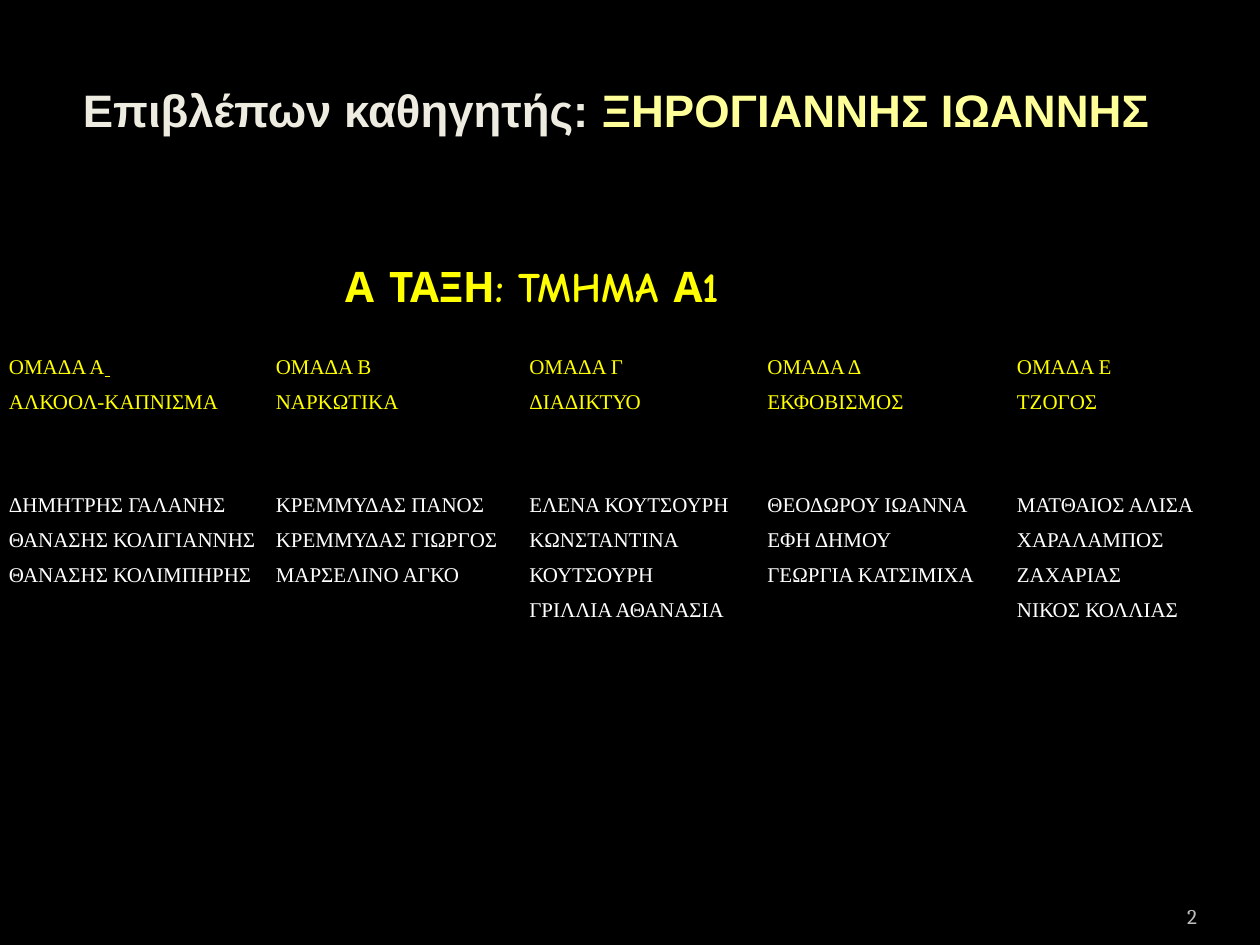
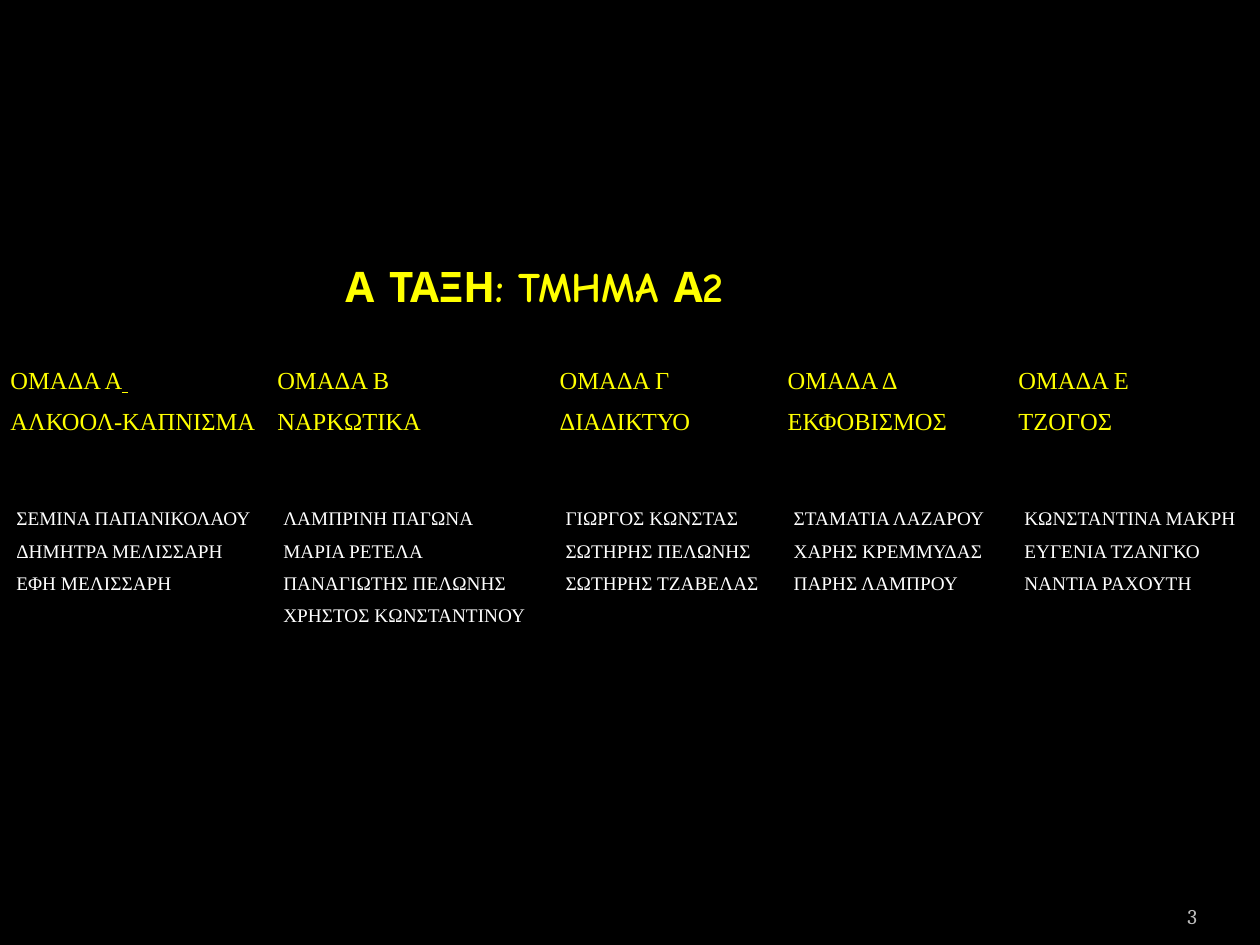
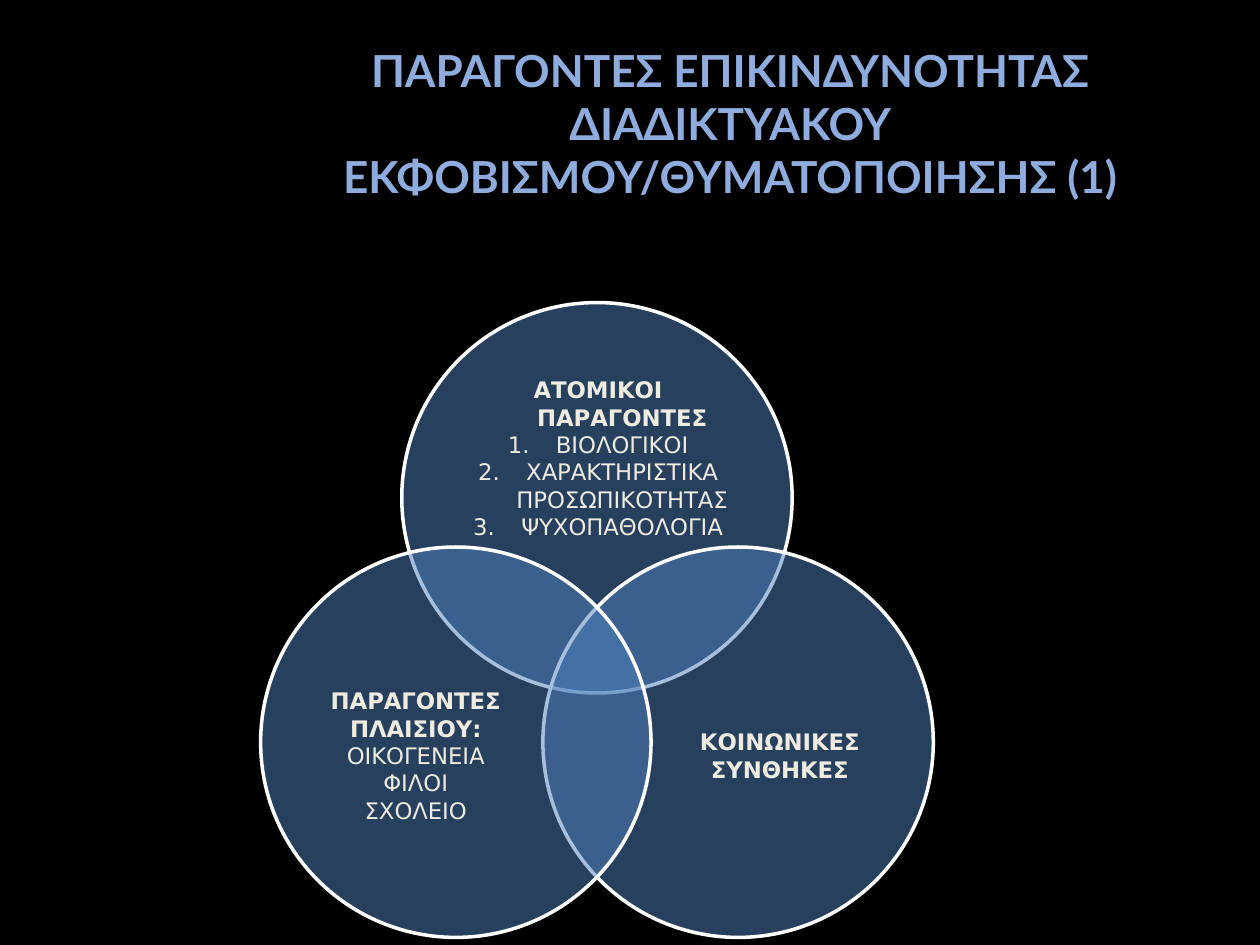
import math

from pptx import Presentation
from pptx.dml.color import RGBColor
from pptx.enum import shapes, text
from pptx.oxml import parse_xml
from pptx.oxml.ns import nsdecls
from pptx.oxml.xmlchemy import OxmlElement
from pptx.util import Cm, Pt

BLACK, WHITE, YELLOW, CREAM = "000000", "FFFFFF", "FFFF00", "EEECE1"
LEFT, MID, RIGHT = text.PP_ALIGN.LEFT, text.PP_ALIGN.CENTER, text.PP_ALIGN.RIGHT
TOP, CENTRE, BOTTOM = (text.MSO_ANCHOR.TOP, text.MSO_ANCHOR.MIDDLE,
                       text.MSO_ANCHOR.BOTTOM)
SERIF, SANS, COMIC = "Times New Roman", "DejaVu Sans", "Comic Neue"
PAD = (0.25, 0.13)
HEAD_BOX = (6.71, 5.13, 13, 1.4)
GROUPS = ["ΟΜΑΔΑ Α\nΑΛΚΟΟΛ-ΚΑΠΝΙΣΜΑ", "ΟΜΑΔΑ Β\nΝΑΡΚΩΤΙΚΑ",
          "ΟΜΑΔΑ Γ\nΔΙΑΔΙΚΤΥΟ", "ΟΜΑΔΑ Δ\nΕΚΦΟΒΙΣΜΟΣ", "ΟΜΑΔΑ Ε\nΤΖΟΓΟΣ"]


def rgb(code):
    return RGBColor.from_string(code)


def style(run, face, size, colour, bold=False):
    font = run.font
    font.name, font.size, font.bold = face, Pt(size), bold
    font.color.rgb = rgb(colour)


class Deck:
    def __init__(self):
        self.prs = Presentation()
        self.prs.slide_width, self.prs.slide_height = Cm(25.4), Cm(19.05)
        fill = self.prs.slide_master.background.fill
        fill.solid()
        fill.fore_color.rgb = rgb(BLACK)

    def page(self, number=None):
        """Start a slide; a number, if given, goes at the lower right."""
        self.slide = self.prs.slides.add_slide(self.prs.slide_layouts[5])
        if number:
            self.label(number, (22.02, 17.83, 2.11, 1.02), "Cambria", 12,
                       "BDBDBD", align=RIGHT, anchor=BOTTOM, pad=(0, 0.13))

    def put(self, shape, words, face, size, colour, bold=False,
            align=MID, anchor=CENTRE, pad=PAD):
        """Set and format the text of a shape."""
        frame = shape.text_frame
        frame.text = words
        frame.word_wrap = True
        frame.auto_size = text.MSO_AUTO_SIZE.NONE
        frame.vertical_anchor = anchor
        frame.margin_left = frame.margin_right = Cm(pad[0])
        frame.margin_top = frame.margin_bottom = Cm(pad[1])
        for para in frame.paragraphs:
            para.alignment = align
            for run in para.runs:
                style(run, face, size, colour, bold)
        return frame

    def title(self, words, box, face, size, colour, **look):
        shape = self.slide.shapes.title
        shape.left, shape.top, shape.width, shape.height = map(Cm, box)
        return self.put(shape, words, face, size, colour, bold=True, **look)

    def label(self, words, box, face, size, colour, **look):
        shape = self.slide.shapes.add_textbox(*map(Cm, box))
        return self.put(shape, words, face, size, colour, **look)

    def cell(self, cell, words, size, colour, pad):
        cell.text = words
        cell.margin_left = cell.margin_right = Cm(pad)
        cell.margin_top = cell.margin_bottom = 0
        for para in cell.text_frame.paragraphs:
            para.line_spacing = 1.5
            for run in para.runs:
                style(run, SERIF, size, colour)
        props = cell._tc.get_or_add_tcPr()
        for side in "LRTB":
            props.append(parse_xml(
                f'<a:ln{side} {nsdecls("a")} w="12700"><a:solidFill>'
                f'<a:srgbClr val="{BLACK}"/></a:solidFill></a:ln{side}>'))
        cell.fill.solid()
        cell.fill.fore_color.rgb = rgb(BLACK)

    def teams(self, spot, widths, heights, names, sizes, pads):
        """Table of the groups, with their members below."""
        table = self.slide.shapes.add_table(
            2, len(widths), *map(Cm, (*spot, sum(widths), sum(heights)))).table
        table.first_row = table.horz_banding = False
        for col, width in zip(table.columns, widths):
            col.width = Cm(width)
        for row, height in zip(table.rows, heights):
            row.height = Cm(height)
        for r, (line, colour) in enumerate([(GROUPS, YELLOW), (names, WHITE)]):
            for c, words in enumerate(line):
                self.cell(table.cell(r, c), words, sizes[r], colour, pads[r])
        tail = table.cell(0, 0).text_frame.paragraphs[0].add_run()
        tail.text = " "
        style(tail, SERIF, sizes[0], YELLOW, True)
        tail.font.italic = tail.font.underline = True

    def disc(self, x, y, size):
        shape = self.slide.shapes.add_shape(
            shapes.MSO_SHAPE.OVAL, Cm(x), Cm(y), Cm(size), Cm(size))
        shape.shadow.inherit = False
        shape.fill.solid()
        shape.fill.fore_color.rgb = rgb("4F81BD")
        alpha = OxmlElement("a:alpha")
        alpha.set("val", "50000")
        shape.fill._xPr.find(".//{*}srgbClr").append(alpha)
        shape.line.color.rgb = rgb(WHITE)
        shape.line.width = Pt(2)

    def factor(self, words, box):
        """Text of a disc: a bold first line, then plain ones."""
        frame = self.label(words, box, SANS, 13, CREAM, pad=(0, 0))
        frame.paragraphs[0].runs[0].font.bold = True
        return frame

    def count(self, frame):
        """Hang all lines and number those after the first."""
        for i, para in enumerate(frame.paragraphs):
            props = para._p.get_or_add_pPr()
            props.set("marL", str(Cm(0.97)))
            props.set("indent", str(-Cm(0.97)))
            if i:
                mark = OxmlElement("a:buAutoNum")
                mark.set("type", "arabicPeriod")
                props.append(mark)


def main():
    deck = Deck()
    head = dict(align=LEFT, anchor=TOP)

    deck.page("2")
    deck.label("Α ΤΑΞΗ: TMHMA Α1", HEAD_BOX, COMIC, 24, YELLOW, bold=True, **head)
    frame = deck.title("Επιβλέπων καθηγητής: ", (0.69, 0.71, 23.47, 2.97),
                       "Arial", 26, CREAM)
    name = frame.paragraphs[0].add_run()
    name.text = "ΞΗΡΟΓΙΑΝΝΗΣ ΙΩΑΝΝΗΣ"
    style(name, "Arial", 26, "FFFF99", True)
    deck.teams((0, 6.93), (5.38, 5.11, 4.8, 5.03, 5.08), (2.79, 3.73), [
        "ΔΗΜΗΤΡΗΣ ΓΑΛΑΝΗΣ\nΘΑΝΑΣΗΣ ΚΟΛΙΓΙΑΝΝΗΣ\nΘΑΝΑΣΗΣ ΚΟΛΙΜΠΗΡΗΣ",
        "ΚΡΕΜΜΥΔΑΣ ΠΑΝΟΣ\nΚΡΕΜΜΥΔΑΣ ΓΙΩΡΓΟΣ\nΜΑΡΣΕΛΙΝΟ ΑΓΚΟ",
        "ΕΛΕΝΑ ΚΟΥΤΣΟΥΡΗ\nΚΩΝΣΤΑΝΤΙΝΑ ΚΟΥΤΣΟΥΡΗ\nΓΡΙΛΛΙΑ ΑΘΑΝΑΣΙΑ",
        "ΘΕΟΔΩΡΟΥ ΙΩΑΝΝΑ\nΕΦΗ ΔΗΜΟΥ\nΓΕΩΡΓΙΑ ΚΑΤΣΙΜΙΧΑ",
        "ΜΑΤΘΑΙΟΣ ΑΛΙΣΑ\nΧΑΡΑΛΑΜΠΟΣ ΖΑΧΑΡΙΑΣ\nΝΙΚΟΣ ΚΟΛΛΙΑΣ",
    ], sizes=(12, 12), pads=(0.18, 0.18))

    deck.page("3")
    deck.title("Α ΤΑΞΗ: TMHMA Α2", HEAD_BOX, COMIC, 24, YELLOW, **head)
    deck.teams((0.03, 7.14), (5.38, 5.69, 4.6, 4.65, 5.08), (2.9, 5.1), [
        "ΣΕΜΙΝΑ ΠΑΠΑΝΙΚΟΛΑΟΥ\nΔΗΜΗΤΡΑ ΜΕΛΙΣΣΑΡΗ\nΕΦΗ ΜΕΛΙΣΣΑΡΗ",
        "ΛΑΜΠΡΙΝΗ ΠΑΓΩΝΑ\nΜΑΡΙΑ ΡΕΤΕΛΑ\nΠΑΝΑΓΙΩΤΗΣ ΠΕΛΩΝΗΣ\n"
        "ΧΡΗΣΤΟΣ ΚΩΝΣΤΑΝΤΙΝΟΥ",
        "ΓΙΩΡΓΟΣ ΚΩΝΣΤΑΣ\nΣΩΤΗΡΗΣ ΠΕΛΩΝΗΣ\nΣΩΤΗΡΗΣ ΤΖΑΒΕΛΑΣ",
        "ΣΤΑΜΑΤΙΑ ΛΑΖΑΡΟΥ\nΧΑΡΗΣ ΚΡΕΜΜΥΔΑΣ\nΠΑΡΗΣ ΛΑΜΠΡΟΥ",
        "ΚΩΝΣΤΑΝΤΙΝΑ ΜΑΚΡΗ\nΕΥΓΕΝΙΑ ΤΖΑΝΓΚΟ\nΝΑΝΤΙΑ ΡΑΧΟΥΤΗ",
    ], sizes=(14, 11), pads=(0.18, 0.3))

    deck.page()
    deck.title("ΠΑΡΑΓΟΝΤΕΣ ΕΠΙΚΙΝΔΥΝΟΤΗΤΑΣ ΔΙΑΔΙΚΤΥΑΚΟΥ "
               "ΕΚΦΟΒΙΣΜΟΥ/ΘΥΜΑΤΟΠΟΙΗΣΗΣ (1)",
               (4.04, 0.86, 21.36, 3.25), "Lato", 25.2, "8FACDE")
    # The discs sit on the corners of an equilateral triangle.
    x, y, size, side = 8.1, 6.1, 7.87, 5.69
    low = y + side * math.sqrt(3) / 2
    deck.disc(x, y, size)
    deck.count(deck.factor(
        "ΑΤΟΜΙΚΟΙ ΠΑΡΑΓΟΝΤΕΣ\nΒΙΟΛΟΓΙΚΟΙ\nΧΑΡΑΚΤΗΡΙΣΤΙΚΑ ΠΡΟΣΩΠΙΚΟΤΗΤΑΣ\n"
        "ΨΥΧΟΠΑΘΟΛΟΓΙΑ", (9.17, 7.47, 5.77, 3.53)))
    deck.disc(x + side / 2, low, size)
    deck.factor("ΚΟΙΝΩΝΙΚΕΣ ΣΥΝΘΗΚΕΣ", (13.36, 13.06, 4.72, 4.34))
    deck.disc(x - side / 2, low, size)
    deck.factor("ΠΑΡΑΓΟΝΤΕΣ ΠΛΑΙΣΙΟΥ:\nΟΙΚΟΓΕΝΕΙΑ\nΦΙΛΟΙ\nΣΧΟΛΕΙΟ",
                (6.02, 13.06, 4.72, 4.34))

    deck.prs.save("out.pptx")


if __name__ == "__main__":
    main()
